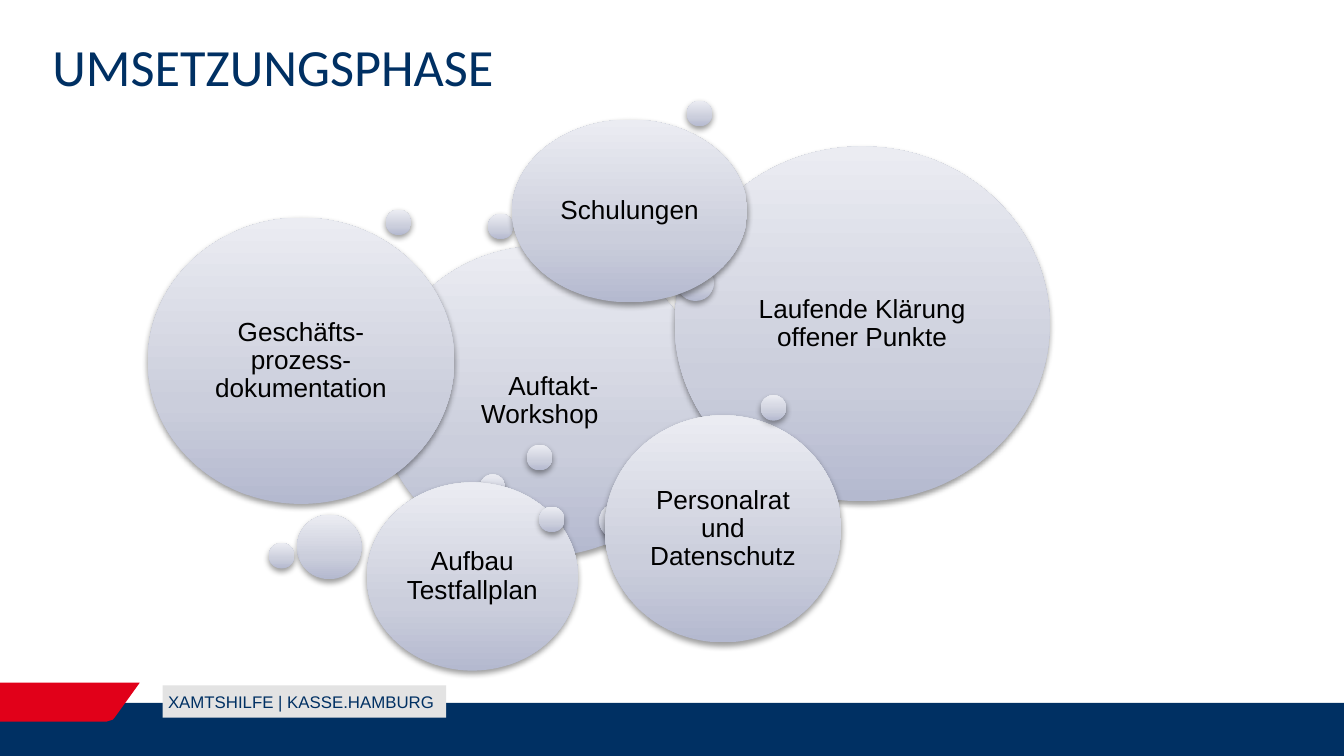
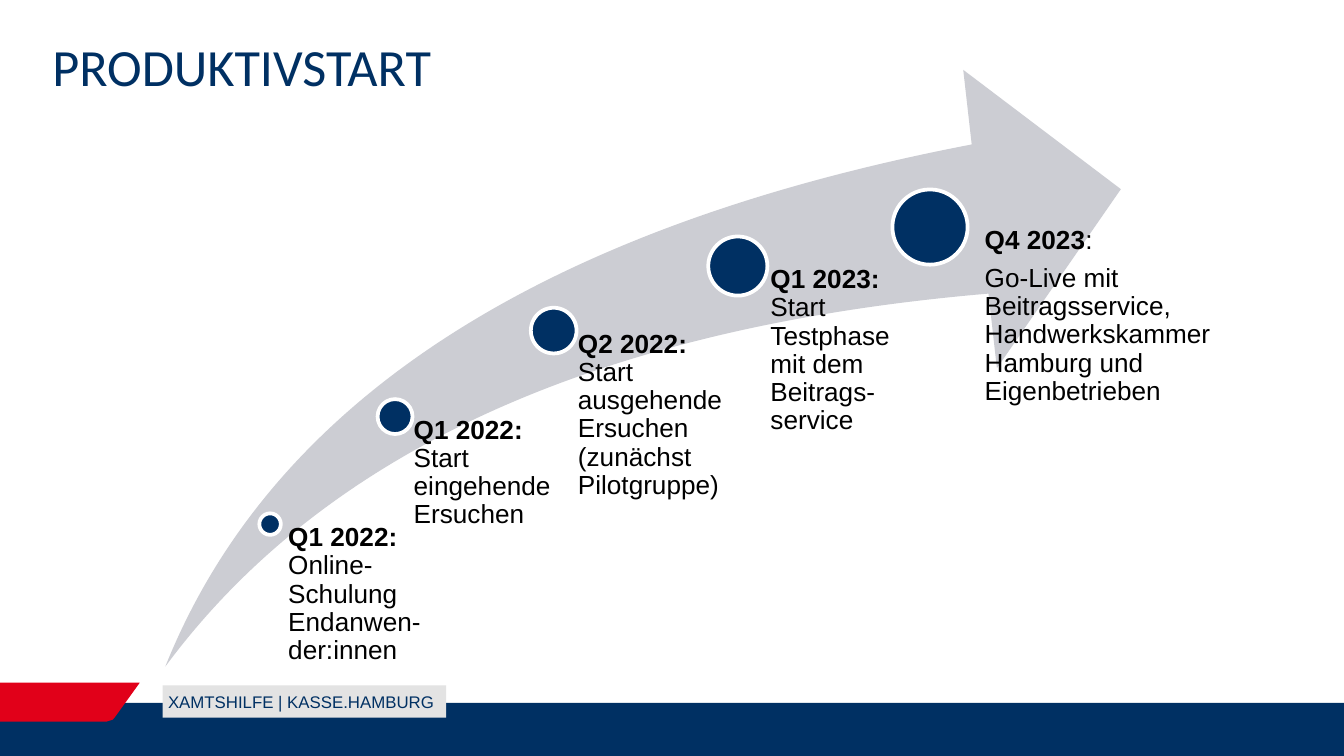
from copy import deepcopy
from dataclasses import dataclass

from lxml.etree import SubElement as Sub
from pptx import Presentation
from pptx.dml.color import RGBColor as Rgb
from pptx.enum.shapes import MSO_SHAPE as Kind
from pptx.enum.text import MSO_ANCHOR as Anchor, MSO_AUTO_SIZE as Fit, PP_ALIGN as Align
from pptx.oxml.ns import qn
from pptx.util import Inches, Pt


@dataclass(frozen=True)
class Theme:
    navy: str = "003063"
    red: str = "E10019"
    white: str = "FFFFFF"
    black: str = "000000"
    label: str = "E3E3E3"
    arrow: str = "CCCDD3"
    grad: tuple = ((0, "B4B9CF"), (0.35, "CBCEDC"), (1, "EBECF2"))
    head: int = 28
    body: int = 14
    small: int = 9


theme = Theme()
deck = Presentation()
deck.slide_width, deck.slide_height = Inches(10), Inches(5.625)
cell = deck.slide_width // 100  # grid of 100 columns and 56.25 rows


def draw(slide, kind, box, fill=None):
    """Add a plain shape; box is left, top, width, height in grid cells."""
    shape = slide.shapes.add_shape(kind, *(round(cell * n) for n in box))
    shape.shadow.inherit = False
    shape.line.fill.background()
    if fill:
        shape.fill.solid()
        shape.fill.fore_color.rgb = Rgb.from_string(fill)
    return shape


def write(frame, paras, size=theme.body, color=theme.black, face="Arial",
          pad=(0, 0, 0, 0), form=None, **look):
    """Fill a frame; each paragraph is a list of (text, bold) runs."""
    sides = ("margin_left", "margin_top", "margin_right", "margin_bottom")
    look = {"word_wrap": True, "vertical_anchor": Anchor.TOP, **look,
            **{side: round(cell * n) for side, n in zip(sides, pad)}}
    for key, val in look.items():
        setattr(frame, key, val)
    form = {"alignment": Align.LEFT, "line_spacing": 0.9, **(form or {})}
    for i, runs in enumerate(paras):
        para = frame.add_paragraph() if i else frame.paragraphs[0]
        for key, val in form.items():
            setattr(para, key, val)
        for text, bold in runs:
            run = para.add_run()
            run.text = text
            for key, val in {"size": Pt(size), "name": face, "bold": bold}.items():
                setattr(run.font, key, val)
            run.font.color.rgb = Rgb.from_string(color)


# Title, footer band and footer label of both slides
flag = [(10.4, 50.8), (8.6, 53.3), (8.4, 53.55), (7.9, 53.7), (0, 53.7)]
pages = []
for name in ("UMSETZUNGSPHASE", "PRODUKTIVSTART"):
    page = deck.slides.add_slide(deck.slide_layouts[5])
    pages.append(page)
    title = page.shapes.title
    spots = zip(("left", "top", "width", "height"), (3.9, 3.1, 93.3, 4.2))
    for key, n in spots:
        setattr(title, key, round(cell * n))
    write(title.text_frame, [[(name, False)]], theme.head, theme.navy, "Calibri",
          auto_size=Fit.SHAPE_TO_FIT_TEXT)
    draw(page, Kind.RECTANGLE, (0, 52.3, 100, 3.95), theme.navy)
    pen = page.shapes.build_freeform(0, round(cell * 50.8))
    pen.add_line_segments([(round(cell * x), round(cell * y)) for x, y in flag])
    wedge = pen.convert_to_shape()
    wedge.shadow.inherit = False
    wedge.line.fill.background()
    wedge.fill.solid()
    wedge.fill.fore_color.rgb = Rgb.from_string(theme.red)

cloud, swoosh = pages

# Bubbles from back to front; the small ones carry no text
dot = 1.9
bubbles = [
    (28.2, 18.3, 24.3, 23.1, "Auftakt-Workshop"),
    (35.7, 35.3, dot, dot, ""),
    (53.8, 22.9, dot, dot, ""),
    (44.6, 37.4, 2.7, 2.7, ""),
    (36.3, 15.9, dot, dot, ""),
    (30.2, 26.9, dot, dot, ""),
    (11, 16.2, 22.8, 21.3, "Geschäfts-prozess-dokumentation"),
    (39.4, 16, 2.7, 2.7, ""),
    (22.1, 38.3, 4.8, 4.8, ""),
    (50.2, 10.9, 27.9, 26.4, "Laufende Klärung offener Punkte"),
    (50.4, 19.7, 2.7, 2.7, ""),
    (20, 40.4, dot, dot, ""),
    (39.2, 33.1, dot, dot, ""),
    (45, 30.9, 17.6, 16.9, "Personalrat und Datenschutz"),
    (56.6, 29.4, dot, dot, ""),
    (27.3, 35.9, 15.7, 14, "Aufbau Testfallplan"),
    (40.1, 37.7, dot, dot, ""),
    (38.1, 8.9, 17.5, 13.6, "Schulungen"),
    (28.7, 15.6, dot, dot, ""),
    (51.1, 7.5, dot, dot, ""),
]
for *box, text in bubbles:
    ball = draw(cloud, Kind.OVAL, box)
    ball.fill.gradient()
    ball.fill.gradient_angle = 90
    prop = ball.element.spPr
    stops = prop.find(qn("a:gradFill")).find(qn("a:gsLst"))
    stops.append(deepcopy(stops[-1]))
    for stop, (pos, tone) in zip(ball.fill.gradient_stops, theme.grad):
        stop.position = pos
        stop.color.rgb = Rgb.from_string(tone)
    shade = Sub(prop.find(qn("a:effectLst")), qn("a:outerShdw"), blurRad="40000",
                dist="20000", dir="5400000", rotWithShape="0")
    ink = Sub(shade, qn("a:srgbClr"), val=theme.black)
    Sub(ink, qn("a:alpha"), val="38000")
    if text:
        first = text.startswith("Auftakt")
        write(ball.text_frame, [[(text, False)]],
              pad=(0.6, 0.6, 4.4 if first else 0.6, 0.6),
              form={"alignment": Align.RIGHT if first else Align.CENTER},
              vertical_anchor=Anchor.MIDDLE)

# Milestones: dot left, top, size; text left, width; paragraphs
arrow = draw(swoosh, Kind.SWOOSH_ARROW, (12.3, 5.2, 71.1, 44.4), theme.arrow)
arrow.adjustments[0] = arrow.adjustments[1] = 0.25
steps = [
    (19.3, 38.2, 1.6, 20.6, 13.5,
     [[("Q1 2022: ", True), ("Online-Schulung Endanwen-der:innen", False)]]),
    (28.1, 29.7, 2.6, 29.4, 11.8,
     [[("Q1 2022: ", True), ("Start eingehende Ersuchen", False)]]),
    (39.5, 22.9, 3.4, 41.2, 13.7,
     [[("Q2 2022: ", True),
       ("Start ausgehende Ersuchen (zunächst Pilotgruppe)", False)]]),
    (52.7, 17.6, 4.4, 55, 14,
     [[("Q1 2023: ", True),
       ("Start Testphase mit dem Beitrags-service", False)]]),
    (66.4, 14.1, 5.6, 70.3, 25.8,
     [[("Q4 2023", True), (":", False)],
      [("Go-Live mit Beitragsservice, Handwerkskammer Hamburg und Eigenbetrieben",
        False)]]),
]
for left, top, size, start, wide, paras in steps:
    mark = draw(swoosh, Kind.OVAL, (left, top, size, size), theme.navy)
    mark.line.color.rgb = Rgb.from_string(theme.white)
    mark.line.width = Pt(2)
    mid = top + size / 2
    box = (start, mid, wide, 49.6 - mid)
    note = swoosh.shapes.add_textbox(*(round(cell * n) for n in box))
    write(note.text_frame, paras, pad=(0.53 * size, 0, 0, 0),
          form={"space_after": Pt(5)})

for page in pages:
    label = draw(page, Kind.RECTANGLE, (12.1, 51, 21.1, 2.4), theme.label)
    write(label.text_frame, [[("XAMTSHILFE | KASSE.HAMBURG", False)]], theme.small,
          theme.navy, pad=(0.4,) * 4, form={"line_spacing": 1.0},
          word_wrap=False, vertical_anchor=Anchor.MIDDLE)

deck.save("out.pptx")
